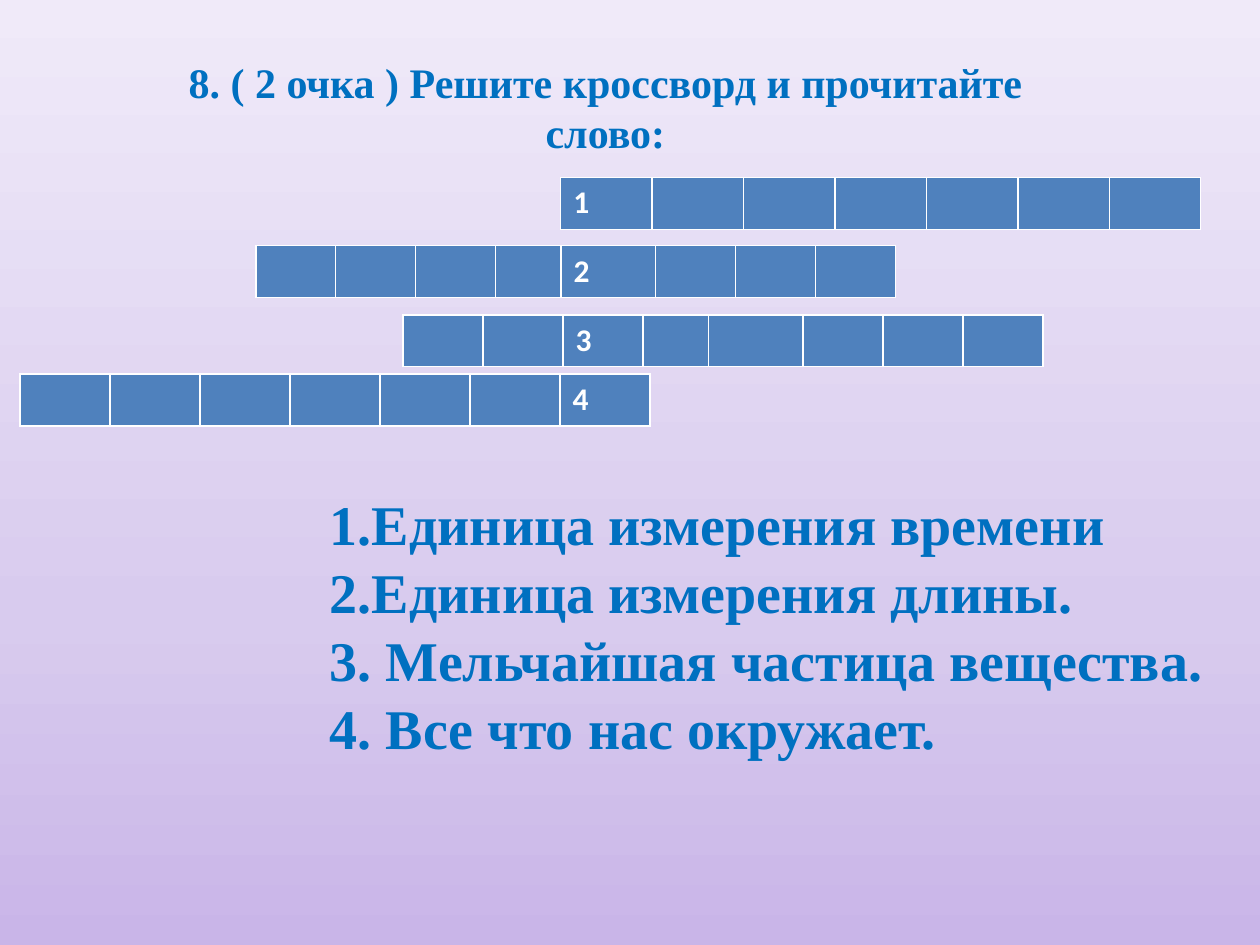
from copy import deepcopy

from pptx import Presentation
from pptx import util as u
from pptx.dml.color import RGBColor
from pptx.enum import shapes, text
from pptx.oxml.ns import qn

WIDTH, HEIGHT = 10, 7.5
ROW_HEIGHT = 0.41
LEADING = 1.21
TEXT_BLUE, CELL_BLUE, WHITE = "0070C0", "4F81BD", "FFFFFF"
BACKDROP_STOPS = [(0, "C9B5E8"), (0.35, "D8CBEE"), (1, "F0EAF9")]

TITLE = "8. ( 2 очка ) Решите кроссворд и прочитайте слово:"
CLUES = [
    "1.Единица измерения времени",
    "2.Единица измерения длины.",
    "3. Мельчайшая частица вещества.",
    "4. Все что нас окружает.",
]
EIGHT_LETTERS = [0.635] * 3 + [0.52, 0.75] + [0.635] * 3
CROSSWORD = [
    (4.45, 1.41, [5.08 / 7] * 7, 0),
    (2.03, 1.95, EIGHT_LETTERS, 4),
    (3.2, 2.5, EIGHT_LETTERS, 2),
    (0.16, 2.97, [5 / 7] * 7, 6),
]


def color(value):
    return RGBColor.from_string(value)


def style_span(span, font, size, value):
    span.font.name = font
    span.font.size = u.Pt(size)
    span.font.bold = True
    span.font.color.rgb = color(value)


def add_backdrop(page):
    panel = page.shapes.add_shape(
        shapes.MSO_SHAPE.RECTANGLE, 0, 0, u.Inches(WIDTH), u.Inches(HEIGHT))
    panel.shadow.inherit = False
    panel.line.fill.background()
    panel.fill.gradient()
    panel.fill.gradient_angle = 90
    stop_list = next(panel._element.spPr.iter(qn("a:gsLst")))
    stop_list.append(deepcopy(stop_list[-1]))
    for stop, (position, value) in zip(panel.fill.gradient_stops, BACKDROP_STOPS):
        stop.position = position
        stop.color.rgb = color(value)


def add_word_row(page, number, left, top, widths, numbered_cell):
    frame = page.shapes.add_table(
        1, len(widths), u.Inches(left), u.Inches(top),
        u.Inches(sum(widths)), u.Inches(ROW_HEIGHT))
    table = frame.table
    for index, width in enumerate(widths):
        table.columns[index].width = u.Inches(width)
        cell = table.cell(0, index)
        cell.fill.solid()
        cell.fill.fore_color.rgb = color(CELL_BLUE)
    para = table.cell(0, numbered_cell).text_frame.paragraphs[0]
    para.text = str(number)
    style_span(para.runs[0], "Calibri", 18, WHITE)


def add_text(page, area, lines, size, alignment):
    box = page.shapes.add_textbox(*(u.Inches(length) for length in area))
    frame = box.text_frame
    frame.word_wrap = True
    frame.vertical_anchor = text.MSO_ANCHOR.MIDDLE
    frame.text = "\n".join(lines)
    for para in frame.paragraphs:
        para.alignment = alignment
        para.line_spacing = u.Pt(size * LEADING)
        style_span(para.runs[0], "Times New Roman", size, TEXT_BLUE)


def main():
    deck = Presentation()
    deck.slide_width, deck.slide_height = u.Inches(WIDTH), u.Inches(HEIGHT)
    page = deck.slides.add_slide(deck.slide_layouts[6])
    add_backdrop(page)
    for number, row in enumerate(CROSSWORD, start=1):
        add_word_row(page, number, *row)
    add_text(page, (0.94, 0.39, 7.73, 0.91), [TITLE], 24, text.PP_ALIGN.CENTER)
    add_text(page, (2.52, 3.83, 7.48, 2.26), CLUES, 32, text.PP_ALIGN.LEFT)
    deck.save("out.pptx")


if __name__ == "__main__":
    main()
